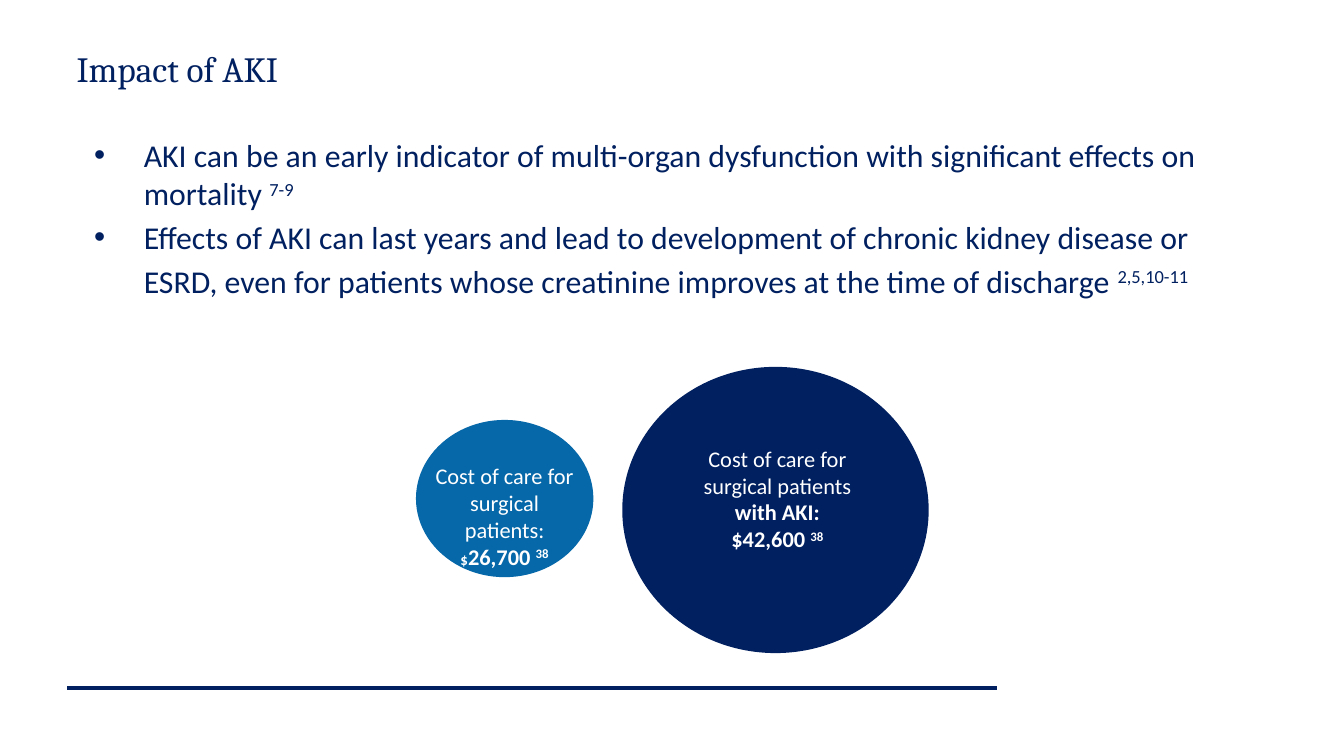
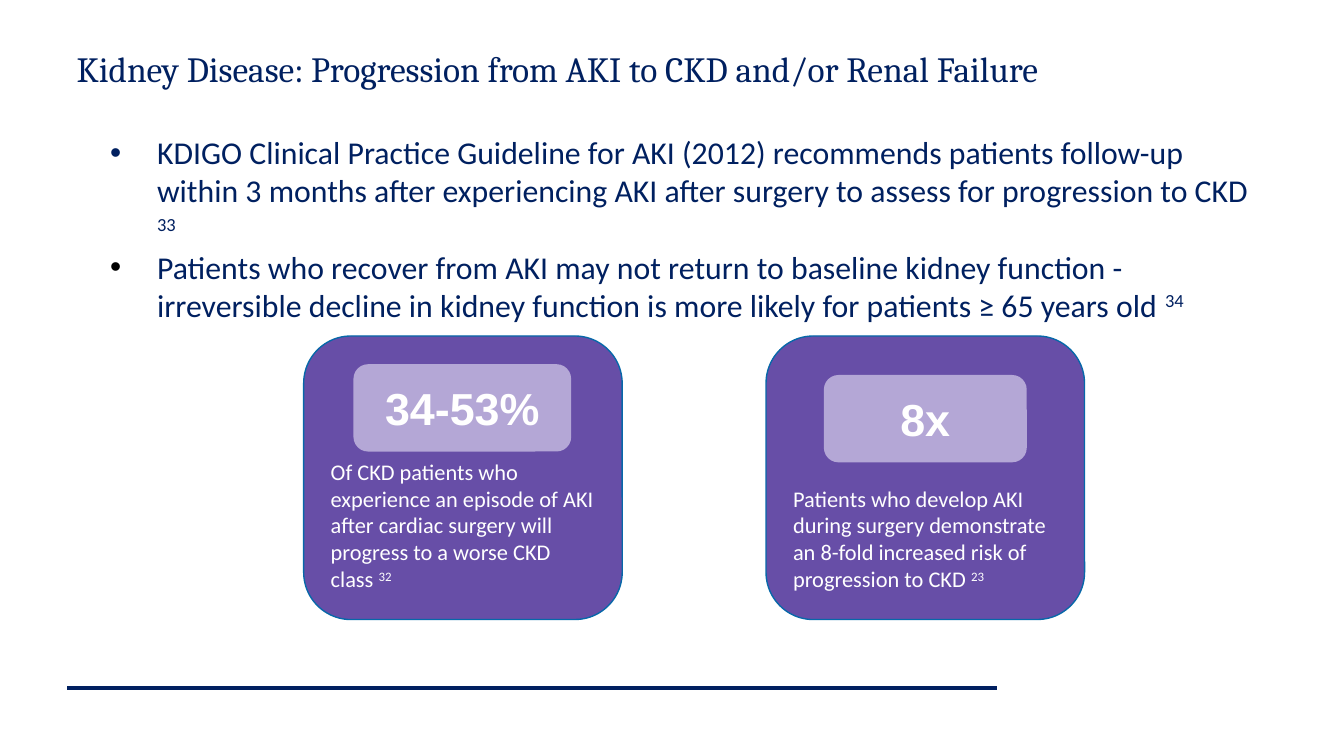
from dataclasses import dataclass
from typing import NamedTuple

from lxml import etree
from pptx import Presentation
from pptx import util as u
from pptx.dml.color import RGBColor
from pptx.enum import shapes, text
from pptx.oxml import ns


@dataclass(frozen=True)
class Theme:
    navy: str = "002060"
    blue: str = "0768A9"
    purple: str = "674EA7"
    lilac: str = "B4A7D6"
    white: str = "FFFFFF"
    black: str = "000000"
    heading_font: str = "Cambria"
    body_font: str = "Calibri"
    figure_font: str = "Arial"
    title_size: float = 19
    bullet_size: float = 17
    label_size: float = 12
    small_size: float = 8
    figure_size: float = 24


THEME = Theme()


class Box(NamedTuple):
    left: float
    top: float
    width: float
    height: float

    def lengths(self) -> list[u.Length]:
        return [u.Inches(value) for value in self]


class Span(NamedTuple):
    text: str
    bold: bool = False
    superscript: bool = False
    size: float | None = None


class Style(NamedTuple):
    font: str
    size: float
    color: str


class Bullet(NamedTuple):
    spans: list[Span]
    color: str = THEME.navy
    line_spacing: float | None = None


class CostCircle(NamedTuple):
    circle: Box
    label: Box
    fill: str
    line: str | None
    spans: list[Span]


class FactCard(NamedTuple):
    left: float
    badge: Box
    figure: str
    spans: list[Span]


TITLE_STYLE = Style(THEME.heading_font, THEME.title_size, THEME.navy)
BULLET_STYLE = Style(THEME.body_font, THEME.bullet_size, THEME.navy)
LABEL_STYLE = Style(THEME.body_font, THEME.label_size, THEME.white)
FIGURE_STYLE = Style(THEME.figure_font, THEME.figure_size, THEME.white)

TITLE_BOX = Box(0.5, 0.32, 9, 0.39)
CARD_TOP, CARD_WIDTH, CARD_HEIGHT = 2.5, 2.37, 2.11

COST_BULLETS = [
    Bullet([
        Span("AKI can be an early indicator of multi-organ dysfunction with "
             "significant effects on mortality "),
        Span("7-9", superscript=True),
    ]),
    Bullet([
        Span("Effects of AKI can last years and lead to development of chronic "
             "kidney disease or ESRD, even for patients whose creatinine "
             "improves at the time of discharge "),
        Span("2,5,10-11", superscript=True),
    ], line_spacing=1.15),
]

COST_CIRCLES = [
    CostCircle(Box(3.1, 3.13, 1.31, 1.16), Box(3.1, 3.34, 1.31, 0.75),
               THEME.blue, THEME.blue, [
        Span("Cost of care for surgical patients: "),
        Span("$", bold=True, size=THEME.small_size),
        Span("26,700 ", bold=True),
        Span("38", bold=True, superscript=True),
    ]),
    CostCircle(Box(4.63, 2.73, 2.28, 2.13), Box(5.1, 3.21, 1.37, 0.96),
               THEME.navy, None, [
        Span("Cost of care for surgical patients "),
        Span("with AKI: $42,600 ", bold=True),
        Span("38", bold=True, superscript=True),
    ]),
]

PROGRESSION_BULLETS = [
    Bullet([
        Span("KDIGO Clinical Practice Guideline for AKI (2012) recommends patients "
             "follow-up within 3 months after experiencing AKI after surgery to "
             "assess for progression to CKD "),
        Span("33", superscript=True),
    ]),
    Bullet([
        Span("Patients who recover from AKI may not return to baseline kidney "
             "function - irreversible decline in kidney function is more likely "
             "for patients ≥ 65 years old "),
        Span("34", superscript=True),
    ], color=THEME.black),
]

FACT_CARDS = [
    FactCard(5.7, Box(6.13, 2.79, 1.51, 0.65), "8x", [
        Span("Patients who develop AKI during surgery demonstrate an 8-fold "
             "increased risk of progression to CKD "),
        Span("23", superscript=True),
    ]),
    FactCard(2.26, Box(2.63, 2.71, 1.62, 0.65), "34-53%", [
        Span("Of CKD patients who experience an episode of AKI after cardiac "
             "surgery will progress to a worse CKD class "),
        Span("32", superscript=True),
    ]),
]


def rgb(color: str) -> RGBColor:
    return RGBColor.from_string(color)


def set_frame(frame, inset_x: float = 0.1, inset_y: float = 0.1,
              anchor=text.MSO_ANCHOR.TOP) -> None:
    frame.word_wrap = True
    frame.auto_size = text.MSO_AUTO_SIZE.NONE
    frame.vertical_anchor = anchor
    frame.margin_left = frame.margin_right = u.Inches(inset_x)
    frame.margin_top = frame.margin_bottom = u.Inches(inset_y)


def write_spans(paragraph, spans: list[Span], style: Style,
                align=text.PP_ALIGN.LEFT) -> None:
    paragraph.alignment = align
    for span in spans:
        run = paragraph.add_run()
        run.text = span.text
        run.font.name = style.font
        run.font.size = u.Pt(span.size or style.size)
        run.font.bold = span.bold
        run.font.color.rgb = rgb(style.color)
        if span.superscript:
            run.font._element.set("baseline", "30000")


def add_bullet_mark(paragraph, color: str, hanging: float) -> None:
    properties = paragraph._p.get_or_add_pPr()
    properties.set("marL", str(u.Inches(0.5)))
    properties.set("indent", str(-u.Inches(hanging)))
    mark_color = etree.SubElement(properties, ns.qn("a:buClr"))
    etree.SubElement(mark_color, ns.qn("a:srgbClr"), val=color)
    etree.SubElement(properties, ns.qn("a:buFont"), typeface=THEME.figure_font)
    etree.SubElement(properties, ns.qn("a:buChar"), char="•")


def add_bullets(slide, box: Box, bullets: list[Bullet], hanging: float,
                inset_x: float, inset_y: float) -> None:
    frame = slide.shapes.add_textbox(*box.lengths()).text_frame
    set_frame(frame, inset_x, inset_y)
    for index, bullet in enumerate(bullets):
        paragraph = frame.add_paragraph() if index else frame.paragraphs[0]
        add_bullet_mark(paragraph, bullet.color, hanging)
        if bullet.line_spacing:
            paragraph.line_spacing = bullet.line_spacing
        write_spans(paragraph, bullet.spans, BULLET_STYLE)


def add_filled(parent, kind, box: Box, fill: str, line: str | None = None):
    """Add a flat preset shape to a slide or a group."""
    shape = parent.shapes.add_shape(kind, *box.lengths())
    shape.shadow.inherit = False
    shape.fill.solid()
    shape.fill.fore_color.rgb = rgb(fill)
    if line:
        shape.line.color.rgb = rgb(line)
        shape.line.width = u.Pt(0.75)
    else:
        shape.line.fill.background()
    return shape


def add_cost_circle(slide, cost: CostCircle) -> None:
    group = slide.shapes.add_group_shape()
    add_filled(group, shapes.MSO_SHAPE.OVAL, cost.circle, cost.fill, cost.line)
    frame = group.shapes.add_textbox(*cost.label.lengths()).text_frame
    set_frame(frame)
    write_spans(frame.paragraphs[0], cost.spans, LABEL_STYLE, text.PP_ALIGN.CENTER)


def add_fact_card(slide, fact: FactCard) -> None:
    rounded = shapes.MSO_SHAPE.ROUNDED_RECTANGLE
    card_box = Box(fact.left, CARD_TOP, CARD_WIDTH, CARD_HEIGHT)
    card = add_filled(slide, rounded, card_box, THEME.purple, THEME.blue)
    set_frame(card.text_frame, anchor=text.MSO_ANCHOR.BOTTOM)
    write_spans(card.text_frame.paragraphs[0], fact.spans, LABEL_STYLE)

    badge = add_filled(slide, rounded, fact.badge, THEME.lilac)
    set_frame(badge.text_frame, anchor=text.MSO_ANCHOR.MIDDLE)
    write_spans(badge.text_frame.paragraphs[0], [Span(fact.figure, bold=True)],
                FIGURE_STYLE, text.PP_ALIGN.CENTER)


def add_titled_slide(deck, title: str):
    """Add a blank slide with the shared title and footer rule."""
    slide = deck.slides.add_slide(deck.slide_layouts[6])
    rule = slide.shapes.add_connector(
        shapes.MSO_CONNECTOR.STRAIGHT,
        u.Inches(0.5), u.Inches(5.12), u.Inches(7.42), u.Inches(5.12))
    rule.line.color.rgb = rgb(THEME.navy)
    rule.line.width = u.Pt(2)
    etree.SubElement(rule._element.spPr, ns.qn("a:effectLst"))

    frame = slide.shapes.add_textbox(*TITLE_BOX.lengths()).text_frame
    set_frame(frame, 0.07, 0.04, text.MSO_ANCHOR.BOTTOM)
    write_spans(frame.paragraphs[0], [Span(title)], TITLE_STYLE)
    return slide


def main() -> None:
    deck = Presentation()
    deck.slide_width = u.Inches(10)
    deck.slide_height = u.Inches(10 * 9 / 16)

    impact = add_titled_slide(deck, "Impact of AKI")
    add_bullets(impact, Box(0.5, 0.97, 9, 4.06), COST_BULLETS, 0.37, 0.07, 0.04)
    for cost in COST_CIRCLES:
        add_cost_circle(impact, cost)

    progression = add_titled_slide(
        deck, "Kidney Disease: Progression from AKI to CKD and/or Renal Failure")
    for fact in FACT_CARDS:
        add_fact_card(progression, fact)
    add_bullets(progression, Box(0.57, 0.89, 8.98, 1.5), PROGRESSION_BULLETS,
                0.35, 0.1, 0.1)

    deck.save("out.pptx")


if __name__ == "__main__":
    main()
